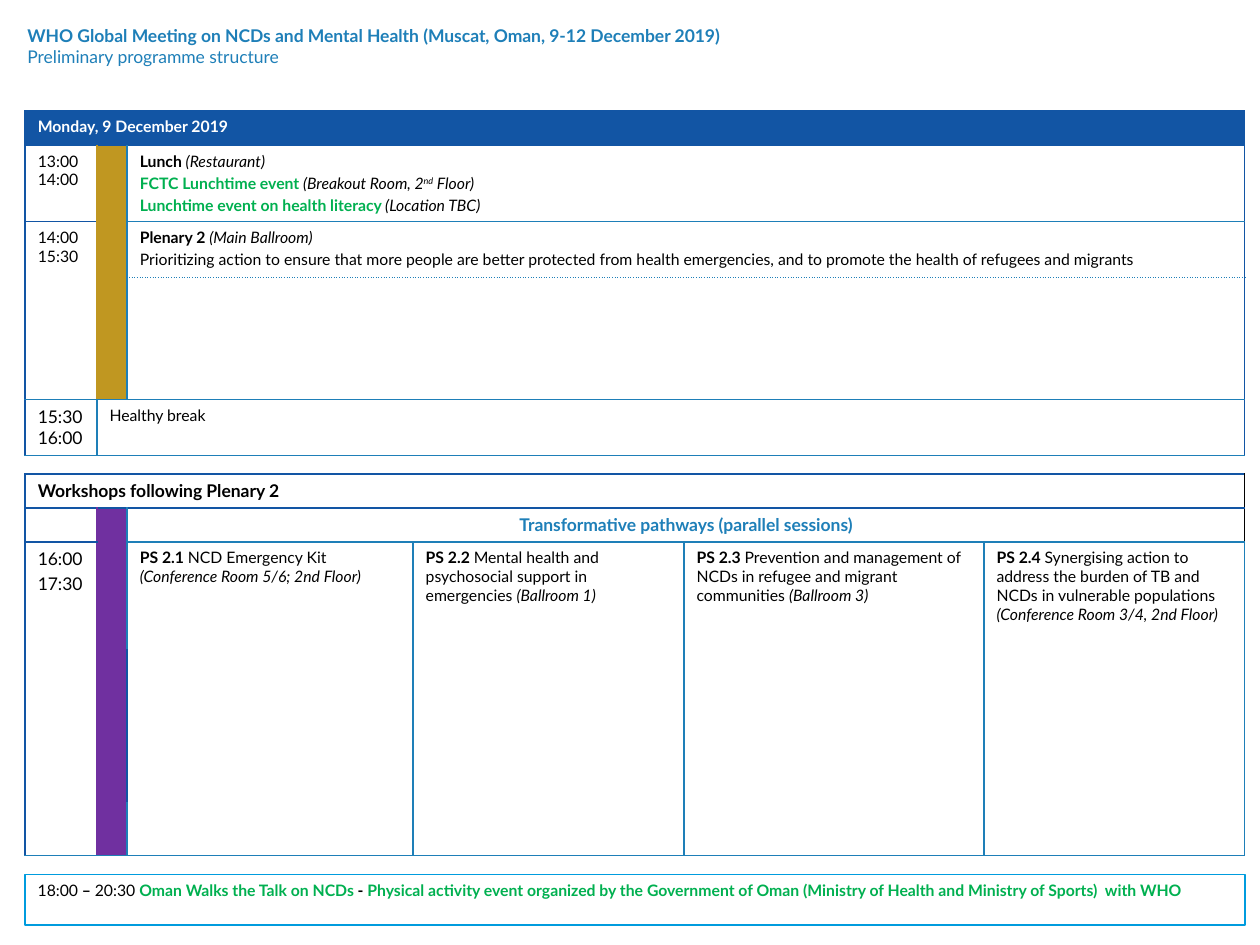
from lxml import etree
from pptx import Presentation
from pptx.dml.color import RGBColor
from pptx.enum.shapes import MSO_SHAPE
from pptx.enum.text import MSO_ANCHOR, PP_ALIGN
from pptx.oxml.ns import qn
from pptx.util import Pt

RECT = MSO_SHAPE.RECTANGLE
TOP = MSO_ANCHOR.TOP
LEFT, CENTER = PP_ALIGN.LEFT, PP_ALIGN.CENTER

BLACK = RGBColor(0x00, 0x00, 0x00)
WHITE = RGBColor(0xFF, 0xFF, 0xFF)
NAVY = RGBColor(0x12, 0x55, 0xA4)
BLUE = RGBColor(0x1E, 0x7F, 0xB8)
SKY = RGBColor(0x00, 0x9C, 0xDE)
GREEN = RGBColor(0x00, 0xB0, 0x50)
GOLD = RGBColor(0xC0, 0x97, 0x21)
PURPLE = RGBColor(0x70, 0x30, 0xA0)

MARGIN_LEFT, WIDTH = 14.4, 696.9
TIME_COL, BAND_COL = 41, 17.3


def run(text, size=9, bold=False, italic=False, color=BLACK, raised=False):
    """Describe one run of text and its format."""
    return text, size, bold, italic, color, raised


class Programme:
    font = "Lato"
    paragraph_gap = 2
    border_width = 1

    def __init__(self, slide):
        self.slide = slide

    def add_runs(self, tf, paragraphs, align=LEFT, gap=0):
        tf.word_wrap = True
        for i, runs in enumerate(paragraphs):
            p = tf.paragraphs[0] if i == 0 else tf.add_paragraph()
            p.alignment = align
            if i and gap:
                p.space_before = Pt(gap)
            for j, (text, size, bold, italic, color, raised) in enumerate(runs):
                for k, line in enumerate(text.split("\n")):
                    if k:
                        p.add_line_break()
                    r = p.add_run()
                    r.text = line
                    font = r.font
                    font.name, font.size = self.font, Pt(size)
                    font.bold, font.italic = bold, italic
                    font.color.rgb = color
                    if raised:
                        r._r.get_or_add_rPr().set("baseline", "30000")

    def text(self, x, y, w, h, paragraphs):
        sp = self.slide.shapes.add_textbox(Pt(x), Pt(y), Pt(w), Pt(h))
        self.add_runs(sp.text_frame, paragraphs)

    def box(self, x, y, w, h, paragraphs, line):
        sp = self.slide.shapes.add_shape(RECT, Pt(x), Pt(y), Pt(w), Pt(h))
        sp.shadow.inherit = False
        sp.fill.background()
        sp.line.color.rgb, sp.line.width = line, Pt(1)
        sp.text_frame.vertical_anchor = TOP
        self.add_runs(sp.text_frame, paragraphs)

    def table(self, x, y, columns, rows):
        frame = self.slide.shapes.add_table(
            len(rows), len(columns), Pt(x), Pt(y), Pt(sum(columns)), Pt(sum(rows)))
        table = frame.table
        table.first_row = table.horz_banding = False
        for column, width in zip(table.columns, columns):
            column.width = Pt(width)
        for row, height in zip(table.rows, rows):
            row.height = Pt(height)
        return table

    def border(self, cell, side, color, dash="solid"):
        ln = etree.SubElement(cell._tc.get_or_add_tcPr(), qn("a:ln" + side),
                              w=str(Pt(self.border_width)))
        if color is None:
            etree.SubElement(ln, qn("a:noFill"))
            return
        fill = etree.SubElement(ln, qn("a:solidFill"))
        etree.SubElement(fill, qn("a:srgbClr"), val=str(color))
        etree.SubElement(ln, qn("a:prstDash"), val=dash)

    def cell(self, table, row, col, paragraphs=(), span=(1, 1), fill=None,
             align=LEFT, gap=paragraph_gap, dotted="", **colors):
        """Fill a cell or merged block; colors maps L, R, T, B to border colours."""
        last_row, last_col = row + span[0] - 1, col + span[1] - 1
        if span != (1, 1):
            table.cell(row, col).merge(table.cell(last_row, last_col))
        for i in range(row, last_row + 1):
            for j in range(col, last_col + 1):
                cell = table.cell(i, j)
                for side in "LRTB":
                    dash = "sysDot" if side == dotted else "solid"
                    self.border(cell, side, colors.get(side, BLUE), dash)
                if fill is None:
                    cell.fill.background()
                else:
                    cell.fill.solid()
                    cell.fill.fore_color.rgb = fill
                if paragraphs and (i, j) == (row, col):
                    self.add_runs(cell.text_frame, paragraphs, align, gap)
                else:
                    p = cell.text_frame.paragraphs[0]
                    etree.SubElement(p._p, qn("a:endParaRPr"), sz="900")


def add_day(page):
    table = page.table(MARGIN_LEFT, 63.4,
                       [TIME_COL, BAND_COL, WIDTH - TIME_COL - BAND_COL],
                       [19.6, 43.4, 31.9, 69.8, 31.9])
    page.cell(table, 0, 0, [[run("Monday, 9 December 2019", bold=True, color=WHITE)]],
              span=(1, 3), fill=NAVY, L=NAVY, R=NAVY, T=NAVY, B=NAVY)
    page.cell(table, 1, 0, [[run("13:00 14:00")]], L=NAVY, T=NAVY, R=GOLD, B=NAVY)
    page.cell(table, 1, 1, fill=GOLD, L=GOLD, T=NAVY, B=GOLD)
    page.cell(table, 1, 2, [
        [run("Lunch ", bold=True), run("(Restaurant)", italic=True)],
        [run("FCTC Lunchtime event ", bold=True, color=GREEN),
         run("(Breakout Room, 2", italic=True),
         run("nd", italic=True, raised=True), run(" Floor)", italic=True)],
        [run("Lunchtime event on health literacy ", bold=True, color=GREEN),
         run("(Location TBC)", italic=True)],
    ], fill=WHITE, R=NAVY, T=NAVY)
    page.cell(table, 2, 0, [[run("14:00\n15:30")]], span=(2, 1), L=NAVY, T=NAVY, R=GOLD)
    page.cell(table, 2, 1, span=(2, 1), fill=GOLD, L=GOLD, T=GOLD)
    page.cell(table, 2, 2, [
        [run("Plenary 2 ", bold=True), run("(Main Ballroom)", italic=True)],
        [run("Prioritizing action to ensure that more people are better protected from "
             "health emergencies, and to promote the health of refugees and migrants")],
    ], fill=WHITE, dotted="B", R=NAVY)
    page.cell(table, 3, 2, fill=WHITE, dotted="T", R=NAVY)
    page.cell(table, 4, 0, [[run("15:30 16:00", size=10)]], fill=WHITE, L=NAVY)
    page.cell(table, 4, 1, [[run("Healthy break")]], span=(1, 2), fill=WHITE, R=NAVY)


def add_workshops(page):
    sessions = [
        ("PS 2.1 ", "NCD Emergency Kit ", "(Conference Room 5/6; 2nd Floor)"),
        ("PS 2.2 ", "Mental health and psychosocial support in emergencies ",
         "(Ballroom 1)"),
        ("PS 2.3 ", "Prevention and management of NCDs in refugee and migrant "
         "communities ", "(Ballroom 3)"),
        ("PS 2.4 ", "Synergising action to address the burden of TB and NCDs in "
         "vulnerable populations ", "(Conference Room 3/4, 2nd Floor)"),
    ]
    table = page.table(MARGIN_LEFT, 270.8,
                       [TIME_COL, BAND_COL, 163.4, 154.8, 171.4, 149],
                       [19.4, 19.6, 61.2, 87.4, 30.4])
    page.cell(table, 0, 0, [[run("Workshops following Plenary 2", size=10, bold=True)]],
              span=(1, 6), L=NAVY, T=NAVY, R=BLACK, B=NAVY)
    page.cell(table, 1, 0, L=NAVY, T=NAVY, R=PURPLE, B=NAVY)
    page.cell(table, 1, 1, span=(4, 1), fill=PURPLE, L=PURPLE, T=NAVY)
    page.cell(table, 1, 2, [[run("Transformative pathways (parallel sessions)",
                                 size=10, bold=True, color=BLUE)]],
              span=(1, 4), align=CENTER, T=NAVY, R=BLACK)
    page.cell(table, 2, 0, [[run("16:00", size=10)], [run("17:30", size=10)]],
              span=(3, 1), L=NAVY, T=NAVY, R=PURPLE)
    for col, (code, title, room) in enumerate(sessions, start=2):
        page.cell(table, 2, col, [[run(code, bold=True), run(title),
                                   run(room, italic=True)]], B=None)
        page.cell(table, 3, col, T=None, B=None, L=NAVY if col == 2 else BLUE)
        page.cell(table, 4, col, T=None)


def main():
    prs = Presentation()
    prs.slide_width, prs.slide_height = Pt(720), Pt(540)
    page = Programme(prs.slides.add_slide(prs.slide_layouts[6]))
    add_day(page)
    add_workshops(page)
    page.text(8.6, 10.8, 579.6, 31.7, [
        [run("WHO Global Meeting on NCDs and Mental Health "
             "(Muscat, Oman, 9-12 December 2019)", size=10, bold=True, color=BLUE)],
        [run("Preliminary programme structure", size=10, color=BLUE)],
    ])
    page.box(MARGIN_LEFT, 499.7, WIDTH, 28.8, [[
        run("18:00"), run(" – ", bold=True), run("20:30 "),
        run("Oman Walks the Talk on NCDs ", bold=True, color=GREEN),
        run("- ", bold=True),
        run("Physical activity event organized by the Government of Oman "
            "(Ministry of Health and Ministry of Sports)  with WHO",
            bold=True, color=GREEN),
    ]], line=SKY)
    prs.save("out.pptx")


if __name__ == "__main__":
    main()
